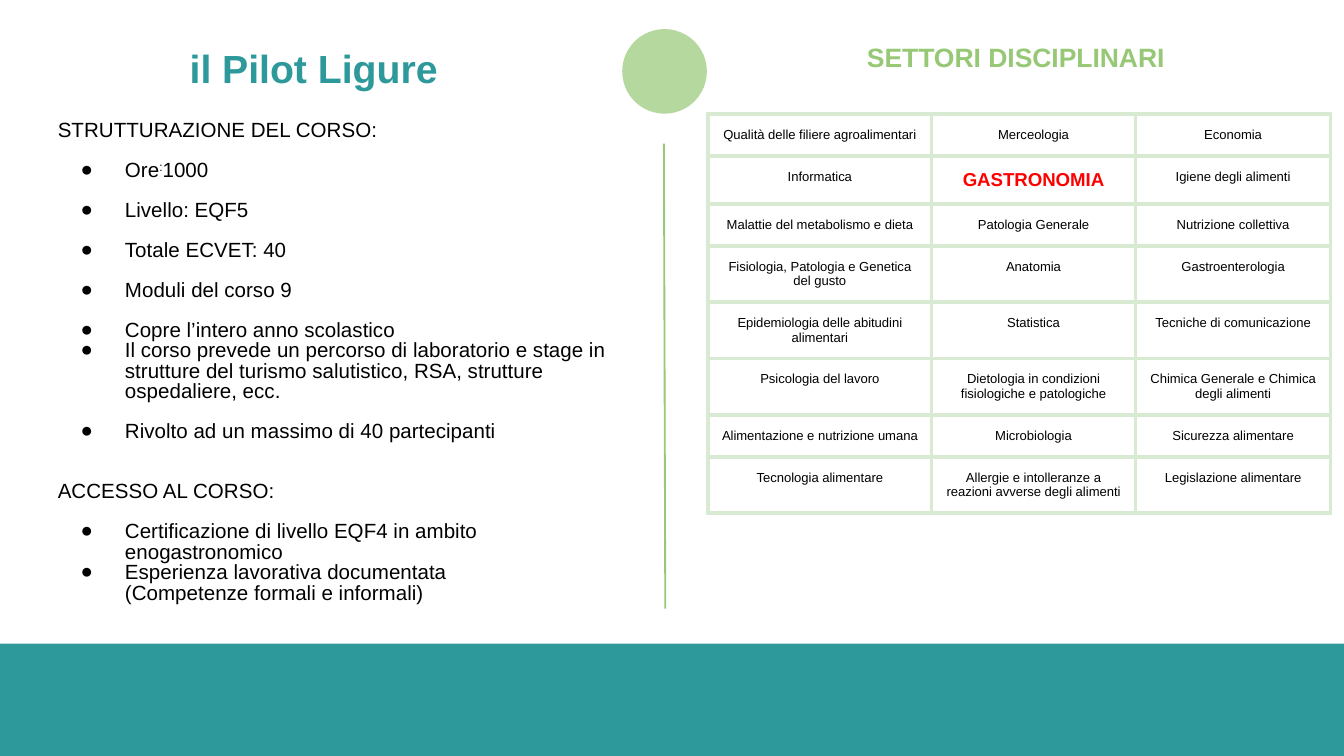
"""Build the course slide: outline on the left, table of subjects on the right."""
from dataclasses import dataclass

from lxml.etree import SubElement
from pptx import Presentation
from pptx.dml.color import RGBColor
from pptx.enum.shapes import MSO_CONNECTOR, MSO_SHAPE
from pptx.enum.text import MSO_ANCHOR, MSO_AUTO_SIZE, PP_ALIGN
from pptx.oxml.ns import qn
from pptx.util import Emu, Inches, Pt

HUES = {"teal": "2E999B", "green": "97C875", "pale": "D9EAD3",
        "black": "000000", "red": "FF0000", "white": "FFFFFF"}
WIDE, HIGH = Inches(10), Inches(5.625)
GAP = 10.5


@dataclass
class Box:
    """Place and size as percent of the slide."""
    x: float
    y: float
    w: float
    h: float

    def frame(self) -> tuple:
        """Return left, top, width and height."""
        return (Emu(int(WIDE * self.x / 100)), Emu(int(HIGH * self.y / 100)),
                Emu(int(WIDE * self.w / 100)), Emu(int(HIGH * self.h / 100)))


@dataclass
class Style:
    """Look of a run of text."""
    size: float
    hue: str = "black"
    bold: bool = False


@dataclass
class Line:
    """One paragraph of the outline."""
    text: str
    kind: str = "item"
    gap: float = GAP


PLAIN, SMALL = Style(11), Style(7)
LINES = [
    Line("STRUTTURAZIONE DEL CORSO:", "head", 0),
    Line("Ore|:|1000"),
    Line("Livello: EQF5"),
    Line("Totale ECVET: 40"),
    Line("Moduli del corso 9"),
    Line("Copre l’intero anno scolastico"),
    Line("Il corso prevede un percorso di laboratorio e stage in "
         "strutture del turismo salutistico, RSA, strutture ospedaliere, ecc.", gap=0),
    Line("Rivolto ad un massimo di 40 partecipanti"),
    Line("ACCESSO AL CORSO:", "head", 2 * GAP),
    Line("Certificazione di livello EQF4 in ambito enogastronomico"),
    Line("Esperienza lavorativa documentata", gap=0),
    Line("(Competenze formali e informali)", "more", 0),
]
COLS = [16.6, 15.2, 14.5]
ROWS = [5.55, 6.35, 5.55, 7.45, 7.45, 7.45, 5.55, 7.45]
CELLS = [
    ["Qualità delle filiere agroalimentari", "Merceologia", "Economia"],
    ["Informatica", "GASTRONOMIA", "Igiene degli alimenti"],
    ["Malattie del metabolismo e dieta", "Patologia Generale", "Nutrizione collettiva"],
    ["Fisiologia, Patologia e Genetica del gusto", "Anatomia", "Gastroenterologia"],
    ["Epidemiologia delle abitudini alimentari", "Statistica", "Tecniche di comunicazione"],
    ["Psicologia del lavoro", "Dietologia in condizioni fisiologiche e patologiche",
     "Chimica Generale e Chimica degli alimenti"],
    ["Alimentazione e nutrizione umana", "Microbiologia", "Sicurezza alimentare"],
    ["Tecnologia alimentare", "Allergie e intolleranze a reazioni avverse degli alimenti",
     "Legislazione alimentare"],
]


def tint(name: str) -> RGBColor:
    """Look up a colour."""
    return RGBColor.from_string(HUES[name])


def write(para, text: str, style: Style):
    """Add one styled run."""
    run = para.add_run()
    run.text = text
    font = run.font
    font.name, font.size, font.bold = "Arial", Pt(style.size), style.bold
    font.color.rgb = tint(style.hue)
    return run


def place(holder, box: Box):
    """Move a placeholder and return its cleared text frame."""
    holder.left, holder.top, holder.width, holder.height = box.frame()
    frame = holder.text_frame
    frame.word_wrap, frame.auto_size = True, MSO_AUTO_SIZE.NONE
    frame.vertical_anchor = MSO_ANCHOR.TOP
    return frame


def mark(para, kind: str) -> None:
    """Set the indent and bullet of a paragraph."""
    props = para._p.get_or_add_pPr()
    props.set("marL", str(0 if kind == "head" else Inches(0.5)))
    props.set("indent", str(Inches(-0.33) if kind == "item" else 0))
    if kind == "item":
        SubElement(SubElement(props, qn("a:buClr")), qn("a:srgbClr"), val=HUES["black"])
        SubElement(props, qn("a:buFont"), typeface="Arial")
        SubElement(props, qn("a:buChar"), char="●")
    else:
        SubElement(props, qn("a:buNone"))


def head(holder, box: Box, text: str, style: Style, align, pitch: float) -> None:
    """Fill a heading placeholder."""
    para = place(holder, box).paragraphs[0]
    mark(para, "head")
    para.alignment, para.line_spacing, para.space_before = align, pitch, Pt(0)
    write(para, text, style)


def outline(holder, box: Box) -> None:
    """Fill the course outline."""
    frame = place(holder, box)
    for i, line in enumerate(LINES):
        para = frame.add_paragraph() if i else frame.paragraphs[0]
        mark(para, line.kind)
        para.line_spacing, para.space_before = 0.83, Pt(line.gap)
        for j, part in enumerate(line.text.split("|")):
            run = write(para, part, PLAIN)
            if j == 1:
                run._r.get_or_add_rPr().set("baseline", "30000")


def block(slide, kind, box: Box, hue: str, alpha: int = 100) -> None:
    """Draw a filled shape without outline."""
    shape = slide.shapes.add_shape(kind, *box.frame())
    shape.shadow.inherit = False
    shape.line.fill.background()
    shape.fill.solid()
    shape.fill.fore_color.rgb = tint(hue)
    if alpha < 100:
        tone = shape._element.spPr.find(".//" + qn("a:srgbClr"))
        SubElement(tone, qn("a:alpha"), val=str(alpha * 1000))


def rule(slide, box: Box) -> None:
    """Draw the line between the two halves."""
    x, y, w, h = box.frame()
    line = slide.shapes.add_connector(MSO_CONNECTOR.STRAIGHT, x, y, x + w, y + h)
    line.line.color.rgb, line.line.width = tint("green"), Pt(1)
    SubElement(line._element.spPr, qn("a:effectLst"))


def fill(cell, text: str) -> None:
    """Border, colour and fill one table cell."""
    props = cell._tc.get_or_add_tcPr()
    for side in ("lnL", "lnR", "lnT", "lnB"):
        edge = SubElement(props, qn("a:" + side), w=str(Pt(2.25)))
        SubElement(SubElement(edge, qn("a:solidFill")), qn("a:srgbClr"), val=HUES["pale"])
    cell.fill.solid()
    cell.fill.fore_color.rgb = tint("white")
    cell.margin_left = cell.margin_right = cell.margin_top = cell.margin_bottom = Inches(0.1)
    para = cell.text_frame.paragraphs[0]
    para.alignment = PP_ALIGN.CENTER
    write(para, text, Style(10, "red", True) if text == "GASTRONOMIA" else SMALL)


def grid(slide, x: float, y: float) -> None:
    """Draw the table of subjects."""
    box = Box(x, y, sum(COLS), sum(ROWS))
    table = slide.shapes.add_table(len(ROWS), len(COLS), *box.frame()).table
    table.first_row = table.horz_banding = False
    for col, wide in zip(table.columns, COLS):
        col.width = Emu(int(WIDE * wide / 100))
    for row, high, texts in zip(table.rows, ROWS, CELLS):
        row.height = Emu(int(HIGH * high / 100))
        for cell, text in zip(row.cells, texts):
            fill(cell, text)


def main() -> None:
    """Build and save the slide."""
    deck = Presentation()
    deck.slide_width, deck.slide_height = WIDE, HIGH
    slide = deck.slides.add_slide(deck.slide_layouts[3])
    title, left, right = slide.placeholders
    block(slide, MSO_SHAPE.OVAL, Box(46.3, 3.85, 6.3, 11.2), "green", 70)
    block(slide, MSO_SHAPE.RECTANGLE, Box(0, 85.15, 100, 14.85), "teal")
    rule(slide, Box(49.4, 19, 0.1, 61.5))
    head(title, Box(-23.2, 5.7, 93.1, 13.5), "il Pilot Ligure",
         Style(21, "teal", True), PP_ALIGN.CENTER, 0.9)
    outline(left, Box(3.3, 15.1, 44.3, 75))
    grid(slide, 52.7, 15.1)
    head(right, Box(63.5, 5.7, 50.3, 6.2), "SETTORI DISCIPLINARI",
         Style(14.2, "green", True), PP_ALIGN.LEFT, 0.7)
    deck.save("out.pptx")


if __name__ == "__main__":
    main()
